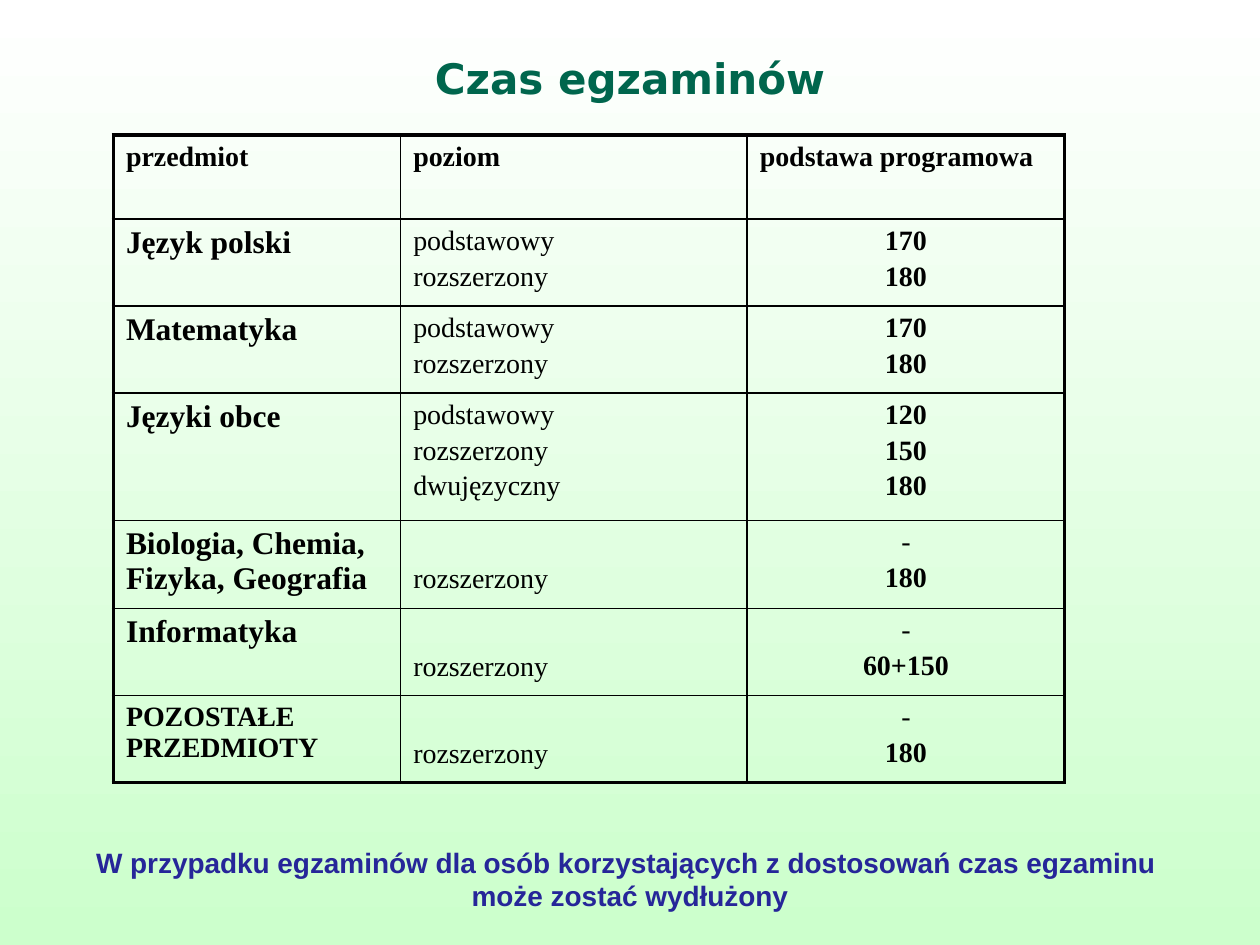
from dataclasses import dataclass

import pptx
import pptx.dml.color
import pptx.enum.text
import pptx.oxml
import pptx.oxml.ns
import pptx.util
from pptx.util import Inches

ALIGN = pptx.enum.text.PP_ALIGN
ANCHOR = pptx.enum.text.MSO_ANCHOR


@dataclass(frozen=True)
class Theme:
    """Colours, fonts and type sizes of the slide."""
    bg_top: str = "FFFFFF"
    bg_bottom: str = "CCFFCC"
    title: str = "00664D"
    text: str = "000000"
    note: str = "262699"
    title_font: str = "DejaVu Sans"
    table_font: str = "Times New Roman"
    note_font: str = "Arial"
    title_size: int = 24
    subject_size: int = 18
    body_size: int = 16
    para_gap: float = 2.7
    outer_line: float = 2.25
    inner_line: float = 1


THEME = Theme()
HEADER = ["przedmiot", "poziom", "podstawa programowa"]
EXAMS = [
    ("Język polski", ["podstawowy", "rozszerzony"], ["170", "180"]),
    ("Matematyka", ["podstawowy", "rozszerzony"], ["170", "180"]),
    ("Języki obce", ["podstawowy", "rozszerzony", "dwujęzyczny"], ["120", "150", "180"]),
    ("Biologia, Chemia, Fizyka, Geografia", ["rozszerzony"], ["-", "180"]),
    ("Informatyka", ["rozszerzony"], ["-", "60+150"]),
    ("POZOSTAŁE PRZEDMIOTY", ["rozszerzony"], ["-", "180"]),
]
COL_WIDTHS = [2.28, 2.75, 2.52]
ROW_HEIGHTS = [0.67, 0.69, 0.69, 1.01, 0.7, 0.69, 0.69]
SECOND_LINE_TOP = 0.34


def rgb(value):
    """Turn a hex string into a colour."""
    return pptx.dml.color.RGBColor.from_string(value)


def style(p, font, size, color, bold=True, align=ALIGN.LEFT):
    """Format a whole paragraph."""
    p.alignment = align
    p.font.name, p.font.size, p.font.bold = font, pptx.util.Pt(size), bold
    p.font.color.rgb = rgb(color)


def set_background(s):
    """Fill the slide with a vertical gradient."""
    fill = s.background.fill
    fill.gradient()
    fill.gradient_angle = 270
    for stop, color in zip(fill.gradient_stops, (THEME.bg_top, THEME.bg_bottom)):
        stop.color.rgb = rgb(color)


def add_title(s, left, top, width, height):
    """Place the heading in the title placeholder."""
    sp = s.shapes.title
    sp.left, sp.top, sp.width, sp.height = map(Inches, (left, top, width, height))
    tf = sp.text_frame
    tf.text = "Czas egzaminów"
    tf.vertical_anchor = ANCHOR.MIDDLE
    tf.margin_bottom = Inches(0.14)
    style(tf.paragraphs[0], THEME.title_font, THEME.title_size, THEME.title, align=ALIGN.CENTER)


def set_borders(cell, widths):
    """Draw the left, right, top and bottom lines of a cell."""
    tc_pr = cell._tc.get_or_add_tcPr()
    for side, width in zip("LRTB", widths):
        tc_pr.append(pptx.oxml.parse_xml(
            f'<a:ln{side} {pptx.oxml.ns.nsdecls("a")} w="{pptx.util.Pt(width)}">'
            f'<a:solidFill><a:srgbClr val="{THEME.text}"/></a:solidFill></a:ln{side}>'))


def fill_cell(cell, lines, size, bold, align):
    """Write one paragraph per line into a cell."""
    tf = cell.text_frame
    tf.text = "\n".join(lines)
    for i, p in enumerate(tf.paragraphs):
        style(p, THEME.table_font, size, THEME.text, bold and p.text != "-", align)
        if i:
            p.space_before = pptx.util.Pt(THEME.para_gap)


def add_exam_table(s, left, top, width, height):
    """Place the table of subjects, levels and minutes."""
    rows, cols = len(ROW_HEIGHTS), len(COL_WIDTHS)
    table = s.shapes.add_table(rows, cols, *map(Inches, (left, top, width, height))).table
    table.first_row = table.horz_banding = False
    for col, w in zip(table.columns, COL_WIDTHS):
        col.width = Inches(w)
    for row, h in zip(table.rows, ROW_HEIGHTS):
        row.height = Inches(h)

    for c, label in enumerate(HEADER):
        fill_cell(table.cell(0, c), [label], THEME.body_size, True, ALIGN.LEFT)
    for r, (subject, levels, minutes) in enumerate(EXAMS, 1):
        size = THEME.body_size if subject.isupper() else THEME.subject_size
        fill_cell(table.cell(r, 0), [subject], size, True, ALIGN.LEFT)
        fill_cell(table.cell(r, 1), levels, THEME.body_size, False, ALIGN.LEFT)
        fill_cell(table.cell(r, 2), minutes, THEME.body_size, True, ALIGN.CENTER)
        if len(levels) < len(minutes):
            table.cell(r, 1).margin_top = Inches(SECOND_LINE_TOP)

    for r in range(rows):
        for c in range(cols):
            cell = table.cell(r, c)
            edges = (c == 0, c == cols - 1, r == 0, r == rows - 1)
            set_borders(cell, [THEME.outer_line if e else THEME.inner_line for e in edges])
            cell.fill.background()


def add_note(s, left, top, width, height):
    """Place the remark below the table."""
    tf = s.shapes.add_textbox(*map(Inches, (left, top, width, height))).text_frame
    tf.word_wrap = True
    p = tf.paragraphs[0]
    p.text = ("W przypadku egzaminów dla osób korzystających z dostosowań czas egzaminu \v"
              "może zostać wydłużony")
    style(p, THEME.note_font, THEME.body_size, THEME.note, align=ALIGN.CENTER)


def main():
    """Build and save the slide."""
    prs = pptx.Presentation()
    prs.slide_width, prs.slide_height = Inches(10), Inches(7.5)
    s = prs.slides.add_slide(prs.slide_layouts.get_by_name("Title Only"))
    set_background(s)
    add_title(s, 0.75, 0.33, 8.5, 0.67)
    add_exam_table(s, 0.9, 1.07, sum(COL_WIDTHS), sum(ROW_HEIGHTS))
    add_note(s, 0, 6.66, 10, 0.64)
    prs.save("out.pptx")


if __name__ == "__main__":
    main()
